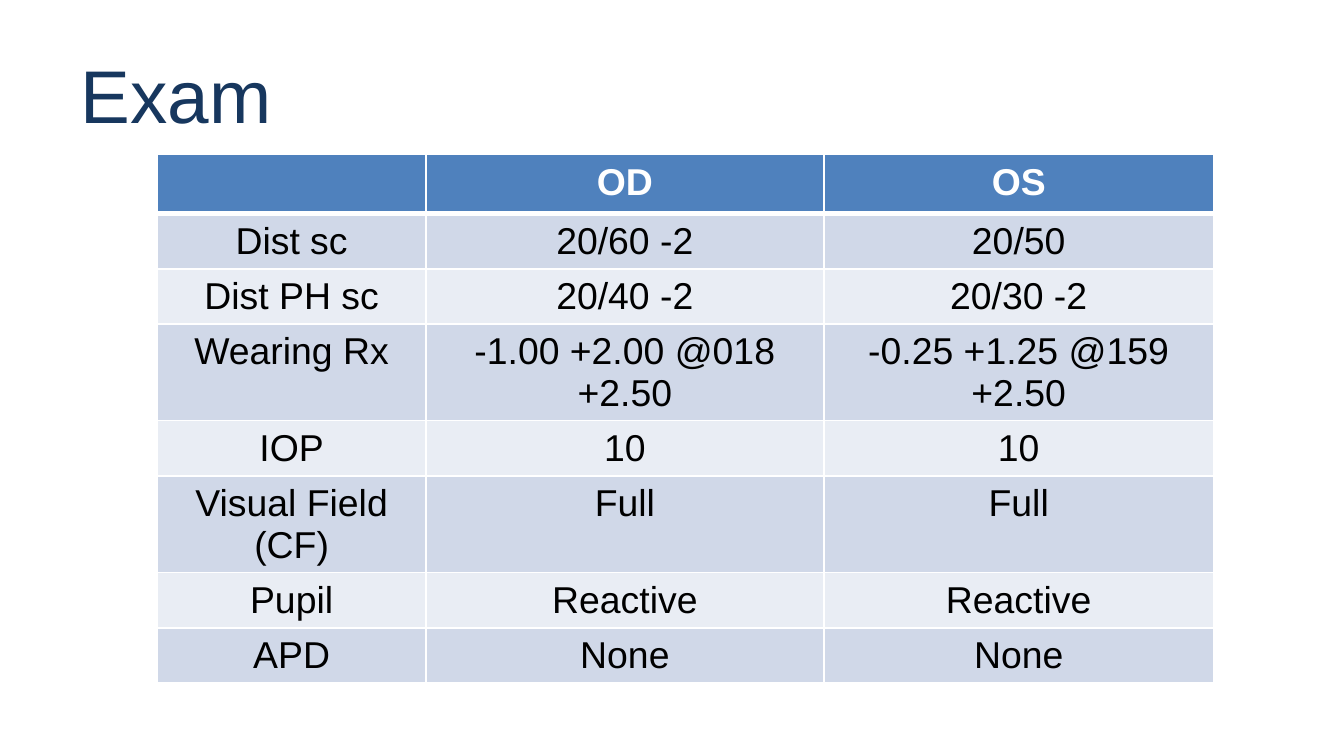
from dataclasses import dataclass

from lxml.etree import SubElement
from pptx import Presentation
from pptx.dml.color import RGBColor
from pptx.enum.text import MSO_ANCHOR, PP_ALIGN
from pptx.oxml.ns import qn
from pptx.util import Inches, Pt

COLORS = {
    "title": "17375E",
    "header": "4F81BD",
    "odd_row": "D0D8E8",
    "even_row": "E9EDF4",
    "white": "FFFFFF",
    "black": "000000",
}
FONT = "Arial"
COLUMN_WIDTHS = (2, 2.96, 2.9)
HEADER_HEIGHT = 0.44
ROW_HEIGHT = 0.41
HEADER_BORDERS = {"lnL": 1, "lnR": 1, "lnT": 1, "lnB": 3}


@dataclass(frozen=True)
class ExamRow:
    label: str
    right_eye: str
    left_eye: str


@dataclass(frozen=True)
class RowStyle:
    fill: str
    text: str
    bold: bool
    height: float


EXAM_ROWS = (
    ExamRow("", "OD", "OS"),
    ExamRow("Dist sc", "20/60 -2", "20/50"),
    ExamRow("Dist PH sc", "20/40 -2", "20/30 -2"),
    ExamRow("Wearing Rx", "-1.00 +2.00 @018 +2.50", "-0.25 +1.25 @159 +2.50"),
    ExamRow("IOP", "10", "10"),
    ExamRow("Visual Field (CF)", "Full", "Full"),
    ExamRow("Pupil", "Reactive", "Reactive"),
    ExamRow("APD", "None", "None"),
)
HEADER_STYLE = RowStyle("header", "white", True, HEADER_HEIGHT)
ODD_STYLE = RowStyle("odd_row", "black", False, ROW_HEIGHT)
EVEN_STYLE = RowStyle("even_row", "black", False, ROW_HEIGHT)


def format_paragraph(paragraph, size: float, color: str, bold: bool, alignment) -> None:
    paragraph.alignment = alignment
    font = paragraph.font
    font.name = FONT
    font.size = Pt(size)
    font.bold = bold
    font.color.rgb = RGBColor.from_string(COLORS[color])


def set_border(cell, side: str, width: float) -> None:
    properties = cell._tc.get_or_add_tcPr()
    line = SubElement(properties, qn(f"a:{side}"), w=str(Pt(width)))
    fill = SubElement(line, qn("a:solidFill"))
    SubElement(fill, qn("a:srgbClr"), val=COLORS["white"])


def style_for(row_index: int) -> RowStyle:
    if row_index == 0:
        return HEADER_STYLE
    return ODD_STYLE if row_index % 2 else EVEN_STYLE


def draw_cell(cell, text: str, style: RowStyle) -> None:
    if style is HEADER_STYLE:
        for side, width in HEADER_BORDERS.items():
            set_border(cell, side, width)
    cell.fill.solid()
    cell.fill.fore_color.rgb = RGBColor.from_string(COLORS[style.fill])
    cell.text = text
    format_paragraph(cell.text_frame.paragraphs[0], 20, style.text, style.bold, PP_ALIGN.CENTER)


def draw_title(slide, text: str) -> None:
    title = slide.shapes.title
    title.left, title.top = Inches(0.5), Inches(0.23)
    title.width, title.height = Inches(9), Inches(0.94)
    title.text_frame.text = text
    title.text_frame.vertical_anchor = MSO_ANCHOR.MIDDLE
    format_paragraph(title.text_frame.paragraphs[0], 40, "title", False, PP_ALIGN.LEFT)


def draw_exam_table(slide, rows: tuple[ExamRow, ...]) -> None:
    table_height = HEADER_HEIGHT + ROW_HEIGHT * (len(rows) - 1)
    table = slide.shapes.add_table(
        len(rows), len(COLUMN_WIDTHS), Inches(1.17), Inches(1.15),
        Inches(sum(COLUMN_WIDTHS)), Inches(table_height),
    ).table
    for column, width in zip(table.columns, COLUMN_WIDTHS):
        column.width = Inches(width)
    for row_index, (row, exam_row) in enumerate(zip(table.rows, rows)):
        style = style_for(row_index)
        row.height = Inches(style.height)
        texts = (exam_row.label, exam_row.right_eye, exam_row.left_eye)
        for cell, text in zip(row.cells, texts):
            draw_cell(cell, text, style)


def main() -> None:
    presentation = Presentation()
    presentation.slide_width = Inches(10)
    presentation.slide_height = presentation.slide_width * 9 // 16
    slide = presentation.slides.add_slide(presentation.slide_layouts[5])
    draw_title(slide, "Exam")
    draw_exam_table(slide, EXAM_ROWS)
    presentation.save("out.pptx")


if __name__ == "__main__":
    main()
